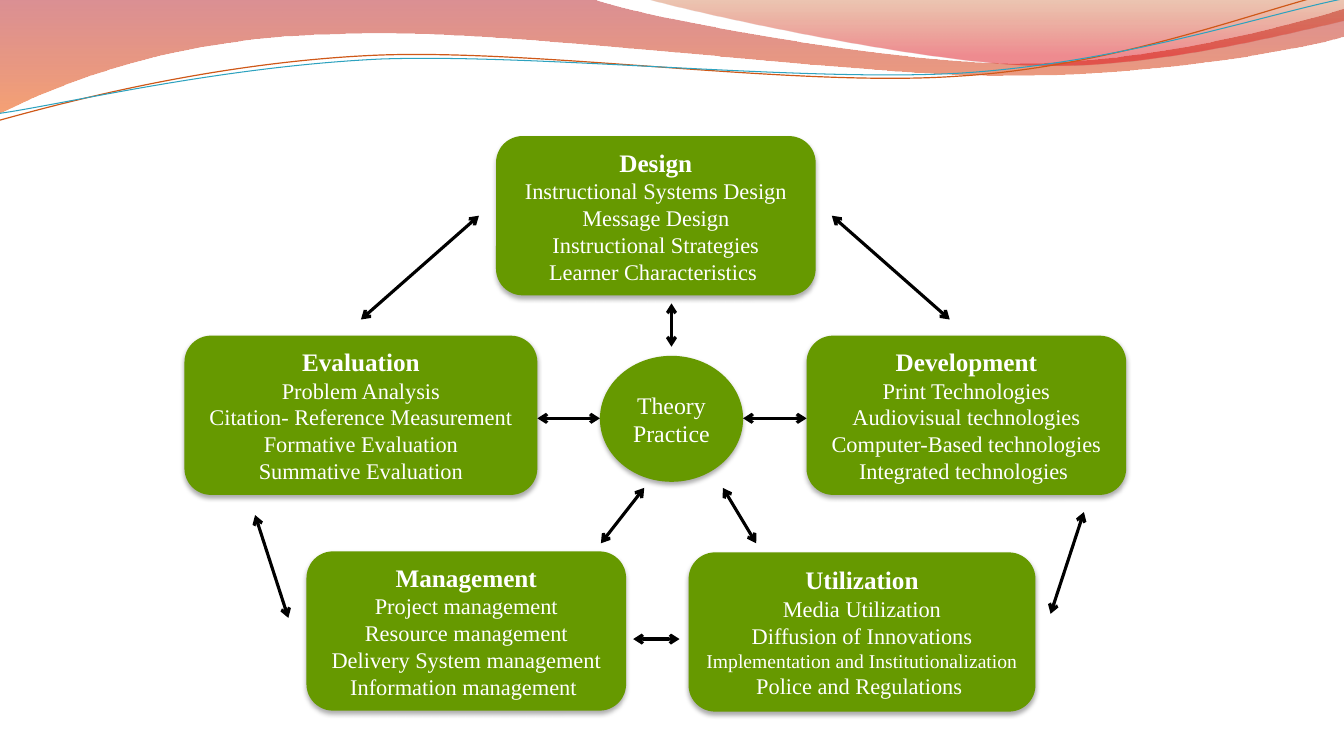
from lxml.etree import SubElement
from pptx import Presentation
from pptx.dml.color import RGBColor
from pptx.enum.shapes import MSO_CONNECTOR, MSO_SHAPE
from pptx.enum.text import MSO_ANCHOR, PP_ALIGN
from pptx.oxml.ns import qn
from pptx.util import Inches, Pt

GREEN = RGBColor(0x66, 0x99, 0x00)
WHITE = RGBColor(0xFF, 0xFF, 0xFF)
BLACK = RGBColor(0x00, 0x00, 0x00)
CRIMSON = RGBColor(0xAF, 0x09, 0x11)
ORANGE = RGBColor(0xEE, 0x53, 0x00)
RUST = RGBColor(0xC2, 0x44, 0x00)
RED = RGBColor(0xDC, 0x00, 0x0B)
COPPER = RGBColor(0xCF, 0x58, 0x18)
TEAL = RGBColor(0x2D, 0xA2, 0xBF)

prs = Presentation()
prs.slide_width, prs.slide_height = Inches(13.33), Inches(7.5)
slide = prs.slides.add_slide(prs.slide_layouts[6])
shapes = slide.shapes


def add_outline(start, segments, closed):
    """Draw segments of one point (straight) or three points (cubic Bézier)."""
    builder = shapes.build_freeform(Inches(start[0]), Inches(start[1]), scale=1.0)
    points = [(Inches(x), Inches(y)) for segment in segments for x, y in segment]
    builder.add_line_segments(points, close=closed)
    outline = builder.convert_to_shape()
    outline.shadow.inherit = False
    steps = iter(list(outline.element.spPr.iter(qn("a:lnTo"))))
    for segment in segments:
        first = next(steps)
        if len(segment) == 3:
            first.tag = qn("a:cubicBezTo")
            for _ in range(2):
                merged = next(steps)
                first.append(merged[0])
                merged.getparent().remove(merged)
    return outline


def add_line_of_text(paragraph, text, size, bold=False, color=WHITE, font="Times New Roman"):
    paragraph.alignment = PP_ALIGN.CENTER
    run = paragraph.add_run()
    run.text = text
    run.font.size = Pt(size)
    run.font.bold = bold
    run.font.name = font
    run.font.color.rgb = color


# Header waves: start, segments, gradient stops (colour, position, opacity %)
waves = [
    ((0, 0),
     [[(5.87, -0.01)],
      [(6.34, 0.17), (8.85, 0.63), (10.11, 0.63)],
      [(11.38, 0.63), (12.78, 0.26), (13.33, 0.09)],
      [(13.35, 0.36)],
      [(13.11, 0.44), (11.6, 0.76), (9.94, 0.75)],
      [(8.29, 0.75), (5.09, 0.28), (3.43, 0.34)],
      [(1.72, 0.36), (0.61, 0.83), (-0.01, 1.13)],
      [(0, 0)]],
     [(CRIMSON, 0, 45), (ORANGE, 1, 55)]),
    ((6.39, -0.01),
     [[(6.79, 0.11), (9.09, 0.62), (10.25, 0.65)],
      [(11.41, 0.69), (12.82, 0.32), (13.33, 0.21)],
      [(13.33, 0)],
      [(6.39, -0.01)]],
     [(RUST, 0, 30), (RED, 0.8, 45)]),
]
for start, segments, stops in waves:
    wave = add_outline(start, segments, closed=True)
    wave.line.fill.background()
    wave.fill.gradient()
    wave.fill.gradient_angle = 270
    for stop, (color, position, _) in zip(wave.fill.gradient_stops, stops):
        stop.color.rgb = color
        stop.position = position
    for color_node, (_, _, opacity) in zip(wave.element.spPr.iter(qn("a:srgbClr")), stops):
        SubElement(color_node, qn("a:alpha"), val=str(opacity * 1000))

# Thin header curves, tilted together
curves = [
    ((-0.03, 0.88),
     [[(0.63, 0.73), (2.11, 0.41), (3.69, 0.41)],
      [(5.28, 0.41), (7.88, 0.93), (9.49, 0.89)],
      [(11.09, 0.87), (12.54, 0.36), (13.33, 0.22)]],
     COPPER, 0.85),
    ((-0.02, 0.81),
     [[(0.62, 0.75), (2.18, 0.45), (3.78, 0.45)],
      [(5.37, 0.47), (7.95, 0.88), (9.54, 0.86)],
      [(11.14, 0.83), (12.56, 0.42), (13.36, 0.3)]],
     TEAL, 0.75),
]
for start, segments, color, width in curves:
    curve = add_outline(start, segments, closed=False)
    curve.rotation = 357.3
    curve.fill.background()
    curve.line.color.rgb = color
    curve.line.width = Pt(width)

# Domains around the centre: preset, left, top, width, height, (text, size) lines
BOX, HUB = MSO_SHAPE.ROUNDED_RECTANGLE, MSO_SHAPE.OVAL
domains = [
    (BOX, 4.92, 1.35, 3.17, 1.58,
     [("Design", 18), ("Instructional Systems Design", 16), ("Message Design", 16),
      ("Instructional Strategies", 16), ("Learner Characteristics ", 16)]),
    (BOX, 8, 3.33, 3.17, 1.58,
     [("Development", 18), ("Print Technologies", 16), ("Audiovisual technologies", 16),
      ("Computer-Based technologies", 16), ("Integrated technologies ", 16)]),
    (BOX, 6.83, 5.48, 3.44, 1.58,
     [("Utilization", 18), ("Media Utilization", 16), ("Diffusion of Innovations", 16),
      ("Implementation and Institutionalization", 14), ("Police and Regulations ", 16)]),
    (BOX, 3.04, 5.47, 3.17, 1.58,
     [("Management", 18), ("Project management", 16), ("Resource management", 16),
      ("Delivery System management", 16), ("Information management ", 16)]),
    (BOX, 1.83, 3.33, 3.5, 1.58,
     [("Evaluation", 18), ("Problem Analysis", 16), ("Citation- Reference Measurement", 16),
      ("Formative Evaluation", 16), ("Summative Evaluation", 16)]),
    (HUB, 5.95, 3.53, 1.42, 1.25, [("Theory", 17), ("Practice", 17)]),
]
for preset, left, top, width, height, lines in domains:
    domain = shapes.add_shape(preset, Inches(left), Inches(top), Inches(width), Inches(height))
    domain.fill.solid()
    domain.fill.fore_color.rgb = GREEN
    domain.line.fill.background()
    domain.shadow.inherit = False
    shadow = SubElement(domain.element.spPr.find(qn("a:effectLst")), qn("a:outerShdw"),
                        blurRad=str(Pt(3.5)), dist=str(Pt(2.2)), dir="5400000", rotWithShape="0")
    shadow_color = SubElement(shadow, qn("a:srgbClr"), val=str(BLACK))
    SubElement(shadow_color, qn("a:alpha"), val="32000")

    frame = domain.text_frame
    frame.word_wrap = True
    frame.vertical_anchor = MSO_ANCHOR.MIDDLE
    frame.margin_left = frame.margin_right = Inches(0.05)
    for index, (text, size) in enumerate(lines):
        paragraph = frame.add_paragraph() if index else frame.paragraphs[0]
        add_line_of_text(paragraph, text, size, bold=size == 18)

# Two-way arrows between neighbours and to the centre
arrows = [
    (3.58, 3.17, 4.75, 2.14),
    (8.25, 2.14, 9.42, 3.17),
    (10.75, 5.08, 10.42, 6.09),
    (6.74, 6.34, 6.28, 6.34),
    (2.86, 6.13, 2.53, 5.11),
    (6.39, 4.84, 5.96, 5.39),
    (6.66, 3.44, 6.66, 3.01),
    (5.95, 4.15, 5.33, 4.15),
    (7.37, 4.15, 8, 4.15),
    (7.17, 4.84, 7.5, 5.39),
]
for ends in arrows:
    arrow = shapes.add_connector(MSO_CONNECTOR.STRAIGHT, *map(Inches, ends))
    arrow.line.color.rgb = BLACK
    arrow.line.width = Pt(2.25)
    properties = arrow.element.spPr
    for end in ("a:headEnd", "a:tailEnd"):
        SubElement(properties.find(qn("a:ln")), qn(end), type="arrow")
    SubElement(properties, qn("a:effectLst"))

prs.save("out.pptx")
